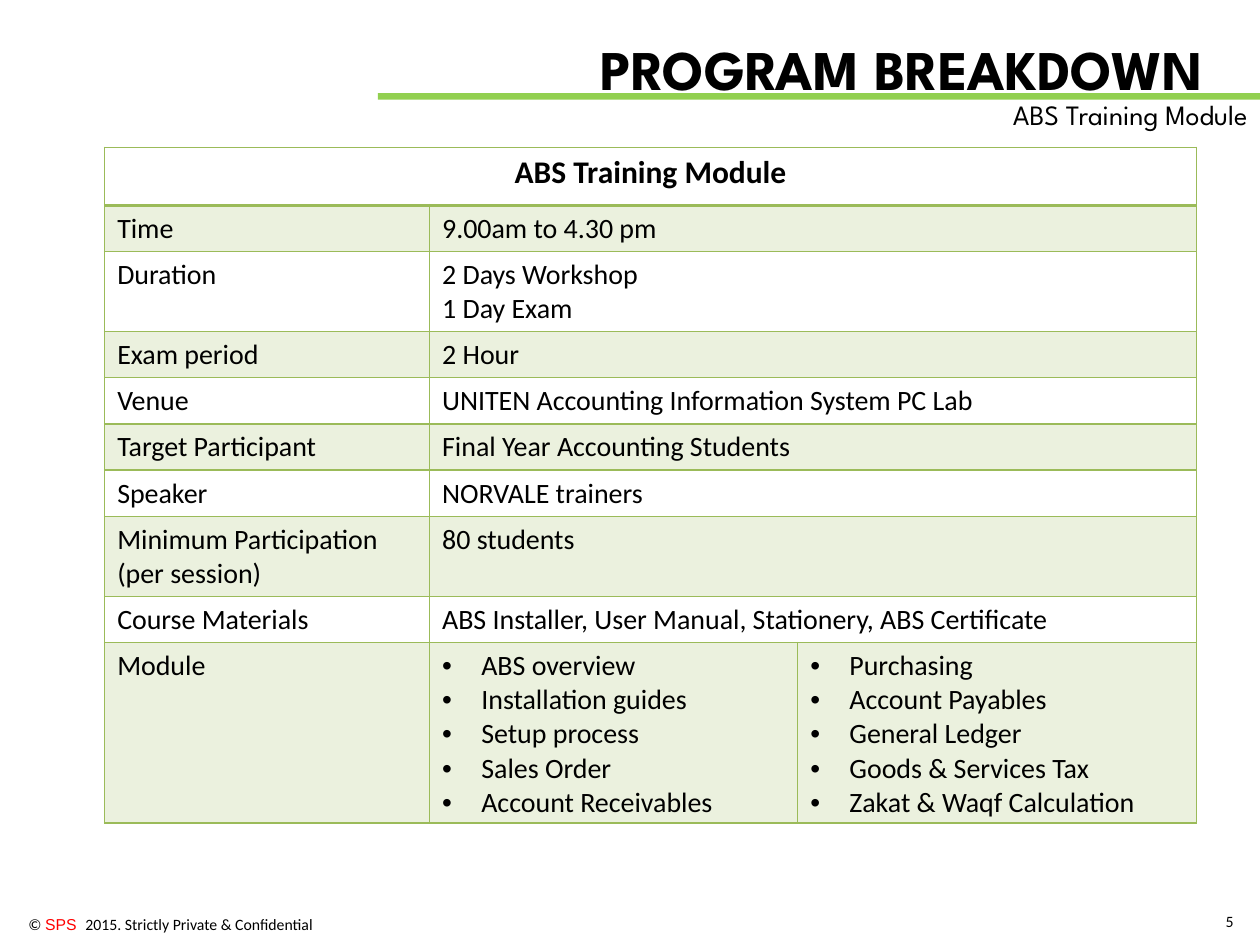
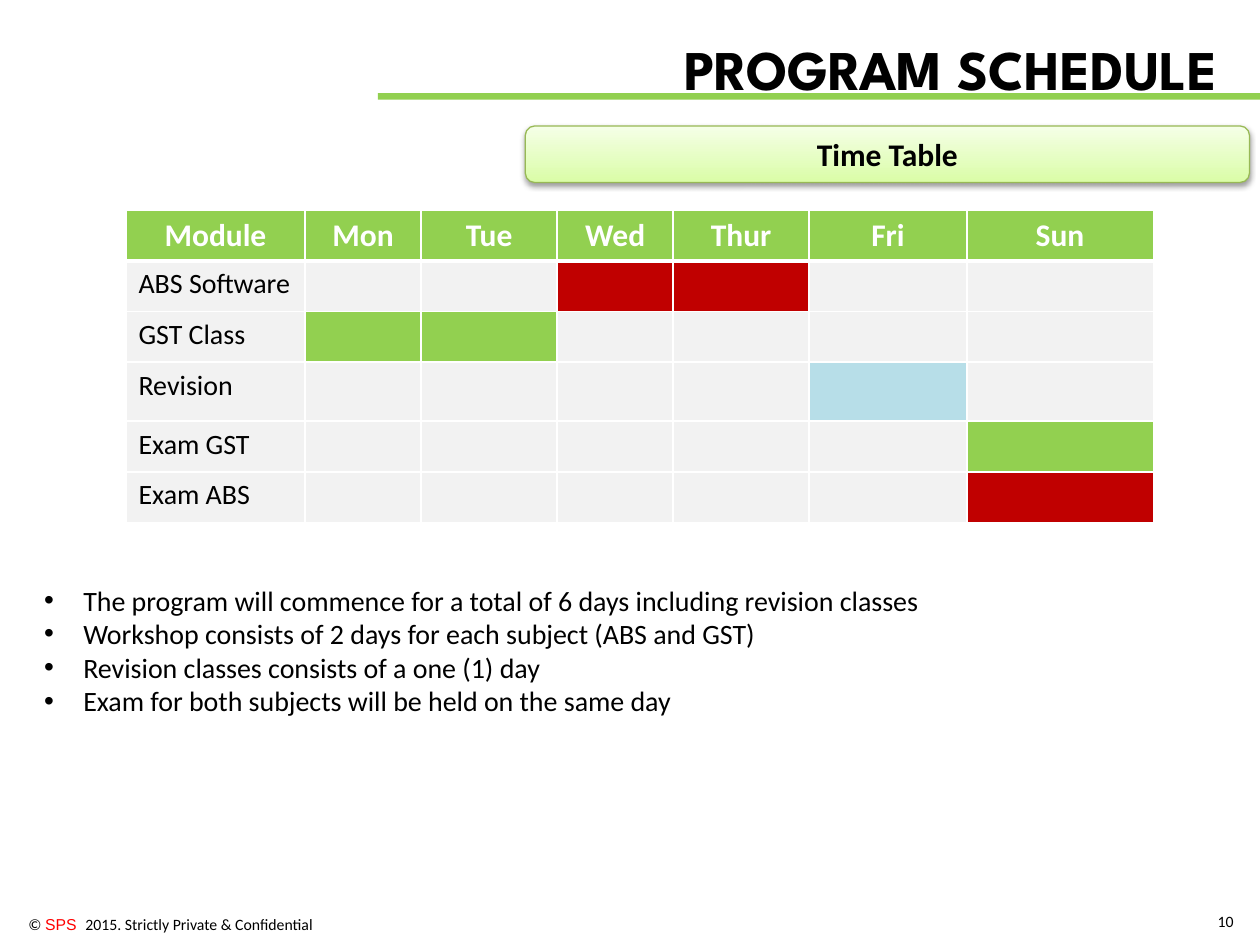
import pptx
import pptx.dml.color
import pptx.enum.shapes
import pptx.enum.text
import pptx.oxml
import pptx.oxml.ns
import pptx.util
from lxml import etree

Cm = pptx.util.Cm
Pt = pptx.util.Pt
Align = pptx.enum.text.PP_ALIGN
Anchor = pptx.enum.text.MSO_ANCHOR
Preset = pptx.enum.shapes.MSO_SHAPE
qualified = pptx.oxml.ns.qn

SLIDE_WIDTH, SLIDE_HEIGHT = 25.4, 19.05
BODY_FONT = "Calibri"
TITLE_FONT = "League Spartan"
BLACK, WHITE, RED = "000000", "FFFFFF", "FF0000"
LIME, OLIVE, PALE_OLIVE = "92D050", "9BBB59", "EBF1DE"
GREY, CRIMSON, SKY = "F2F2F2", "C00000", "B7DEE8"
BULLET_INDENT = 0.79

BREAKDOWN = [
    ("Time", ["9.00am to 4.30 pm"], 0.93),
    ("Duration", ["2 Days Workshop", "1 Day Exam"], 1.61),
    ("Exam period", ["2 Hour"], 0.93),
    ("Venue", ["UNITEN Accounting Information System PC Lab"], 0.93),
    ("Target Participant", ["Final Year Accounting Students"], 0.93),
    ("Speaker", ["NORVALE trainers"], 0.93),
    ("Minimum Participation (per session)", ["80 students"], 1.61),
    ("Course Materials",
     ["ABS Installer, User Manual, Stationery, ABS Certificate"], 0.93),
]
MODULES = [
    ["ABS overview", "Installation guides", "Setup process", "Sales Order",
     "Account Receivables"],
    ["Purchasing", "Account Payables", "General Ledger",
     "Goods & Services Tax", "Zakat & Waqf Calculation"],
]
DAYS = ["Mon", "Tue", "Wed", "Thur", "Fri", "Sun"]
SCHEDULE = [
    ("ABS Software", ["Wed", "Thur"], CRIMSON),
    ("GST Class", ["Mon", "Tue"], LIME),
    ("Revision", ["Fri"], SKY),
    ("Exam GST", ["Sun"], LIME),
    ("Exam ABS", ["Sun"], CRIMSON),
]
NOTES = [
    "The program will commence for a total of 6 days including revision classes",
    "Workshop consists of 2 days for each subject (ABS and GST)",
    "Revision classes consists of a one (1) day",
    "Exam for both subjects will be held on the same day",
]


def color(hex_value):
    return pptx.dml.color.RGBColor.from_string(hex_value)


def add_bullet(paragraph):
    properties = paragraph._p.get_or_add_pPr()
    properties.set("marL", str(Cm(BULLET_INDENT)))
    properties.set("indent", str(-Cm(BULLET_INDENT)))
    etree.SubElement(properties, qualified("a:buFont"), typeface="Arial")
    etree.SubElement(properties, qualified("a:buChar"), char="•")


def style_font(font, size, name=BODY_FONT, hex_value=BLACK, bold=False):
    font.size = Pt(size)
    font.name = name
    font.bold = bold
    font.color.rgb = color(hex_value)


def write_lines(frame, lines, size, align=Align.LEFT, bulleted=False, **style):
    for index, line in enumerate(lines):
        paragraph = frame.add_paragraph() if index else frame.paragraphs[0]
        paragraph.text = line
        paragraph.alignment = align
        if bulleted:
            add_bullet(paragraph)
        style_font(paragraph.font, size, **style)


def add_text(slide, left, top, width, height, lines, size, **style):
    box = slide.shapes.add_textbox(Cm(left), Cm(top), Cm(width), Cm(height))
    box.text_frame.word_wrap = True
    write_lines(box.text_frame, lines, size, **style)
    return box


def add_footer(slide, number):
    box = slide.shapes.add_textbox(Cm(0), Cm(18.31), Cm(6.55), Cm(0.64))
    box.text_frame.word_wrap = True
    paragraph = box.text_frame.paragraphs[0]
    paragraph.alignment = Align.RIGHT
    for text, name, hex_value in [
        ("© ", BODY_FONT, BLACK),
        ("SPS  ", "Arial", RED),
        ("2015. Strictly Private & Confidential", BODY_FONT, BLACK),
    ]:
        run = paragraph.add_run()
        run.text = text
        style_font(run.font, 9, name, hex_value)
    page = add_text(slide, 24.1, 18.11, 1.02, 0.94, [str(number)], 9,
                    align=Align.RIGHT)
    page.text_frame.vertical_anchor = Anchor.MIDDLE


def add_base_slide(presentation, title, title_left, number):
    slide = presentation.slides.add_slide(presentation.slide_layouts[6])
    rule = slide.shapes.add_shape(Preset.RECTANGLE, Cm(7.62), Cm(1.88),
                                  Cm(17.78), Cm(0.13))
    rule.shadow.inherit = False
    rule.fill.solid()
    rule.fill.fore_color.rgb = color(LIME)
    rule.line.fill.background()
    add_footer(slide, number)
    add_text(slide, title_left, 0.58, SLIDE_WIDTH - title_left, 1.63, [title],
             32, name=TITLE_FONT, bold=True)
    return slide


def add_grid(slide, left, top, widths, heights):
    frame = slide.shapes.add_table(len(heights), len(widths), Cm(left), Cm(top),
                                   Cm(sum(widths)), Cm(sum(heights)))
    table = frame.table
    table.first_row = False
    table.horz_banding = False
    for column, width in zip(table.columns, widths):
        column.width = Cm(width)
    for row, height in zip(table.rows, heights):
        row.height = Cm(height)
    return table


def set_borders(table, hex_value, header_width):
    for row_index, row in enumerate(table.rows):
        for cell in row.cells:
            properties = cell._tc.get_or_add_tcPr()
            for side in "LRTB":
                below_header = (row_index, side) in [(0, "B"), (1, "T")]
                width = header_width if below_header else 1
                properties.append(pptx.oxml.parse_xml(
                    f'<a:ln{side} {pptx.oxml.ns.nsdecls("a")} w="{Pt(width)}">'
                    f'<a:solidFill><a:srgbClr val="{hex_value}"/></a:solidFill>'
                    f'</a:ln{side}>'))


def fill_cell(cell, hex_value=None):
    if hex_value:
        cell.fill.solid()
        cell.fill.fore_color.rgb = color(hex_value)
    else:
        cell.fill.background()


def add_breakdown_table(slide):
    heights = [1.17] + [height for _, _, height in BREAKDOWN] + [3.64]
    table = add_grid(slide, 2.11, 2.97, [6.55, 7.42, 8.04], heights)
    set_borders(table, OLIVE, 2)
    for index, row in enumerate(table.rows):
        for cell in row.cells:
            fill_cell(cell, PALE_OLIVE if index % 2 else None)

    table.cell(0, 0).merge(table.cell(0, 2))
    write_lines(table.cell(0, 0).text_frame, ["ABS Training Module"], 18,
                align=Align.CENTER, bold=True)
    for index, (label, details, _) in enumerate(BREAKDOWN, start=1):
        table.cell(index, 1).merge(table.cell(index, 2))
        write_lines(table.cell(index, 0).text_frame, [label], 16)
        write_lines(table.cell(index, 1).text_frame, details, 16)

    module_row = len(heights) - 1
    write_lines(table.cell(module_row, 0).text_frame, ["Module"], 16)
    for index, topics in enumerate(MODULES, start=1):
        write_lines(table.cell(module_row, index).text_frame, topics, 16,
                    bulleted=True)


def add_schedule_table(slide):
    heights = [1.19 if name == "Revision" else 1.02 for name, _, _ in SCHEDULE]
    table = add_grid(slide, 2.54, 4.24,
                     [3.61, 2.34, 2.74, 2.34, 2.74, 3.18, 3.76],
                     [1.02] + heights)
    set_borders(table, WHITE, 3)
    for index, heading in enumerate(["Module"] + DAYS):
        cell = table.cell(0, index)
        fill_cell(cell, LIME)
        write_lines(cell.text_frame, [heading], 18, align=Align.CENTER,
                    hex_value=WHITE, bold=True)
    for row, (name, busy_days, hex_value) in enumerate(SCHEDULE, start=1):
        fill_cell(table.cell(row, 0), GREY)
        write_lines(table.cell(row, 0).text_frame, [name], 16)
        for column, day in enumerate(DAYS, start=1):
            fill_cell(table.cell(row, column),
                      hex_value if day in busy_days else GREY)


def add_banner(slide, text):
    banner = slide.shapes.add_shape(Preset.ROUNDED_RECTANGLE, Cm(10.59),
                                    Cm(2.54), Cm(14.6), Cm(1.14))
    banner.fill.gradient()
    banner.fill.gradient_angle = 90
    for stop, hex_value in zip(banner.fill.gradient_stops, ["DAFDA7", "F5FFE7"]):
        stop.color.rgb = color(hex_value)
    banner.line.color.rgb = color("98B955")
    banner.line.width = Pt(0.75)
    banner.shadow.inherit = False
    effects = banner._element.spPr.find(qualified("a:effectLst"))
    effects.append(pptx.oxml.parse_xml(
        f'<a:outerShdw {pptx.oxml.ns.nsdecls("a")} blurRad="{Pt(3.1)}" '
        f'dist="{Pt(1.6)}" dir="5400000" rotWithShape="0">'
        f'<a:srgbClr val="{BLACK}"><a:alpha val="38000"/></a:srgbClr>'
        '</a:outerShdw>'))
    write_lines(banner.text_frame, [text], 18, align=Align.CENTER, bold=True)


def main():
    presentation = pptx.Presentation()
    presentation.slide_width = Cm(SLIDE_WIDTH)
    presentation.slide_height = Cm(SLIDE_HEIGHT)

    breakdown = add_base_slide(presentation, "PROGRAM BREAKDOWN", 11.86, 5)
    add_text(breakdown, 13.54, 1.85, 11.86, 0.94, ["ABS Training Module"], 16,
             align=Align.RIGHT, name=TITLE_FONT)
    add_breakdown_table(breakdown)

    schedule = add_base_slide(presentation, "PROGRAM SCHEDULE", 13.54, 10)
    add_schedule_table(schedule)
    add_banner(schedule, "Time Table")
    add_text(schedule, 0.64, 11.63, 19.89, 3, NOTES, 16, bulleted=True)

    presentation.save("out.pptx")


if __name__ == "__main__":
    main()
